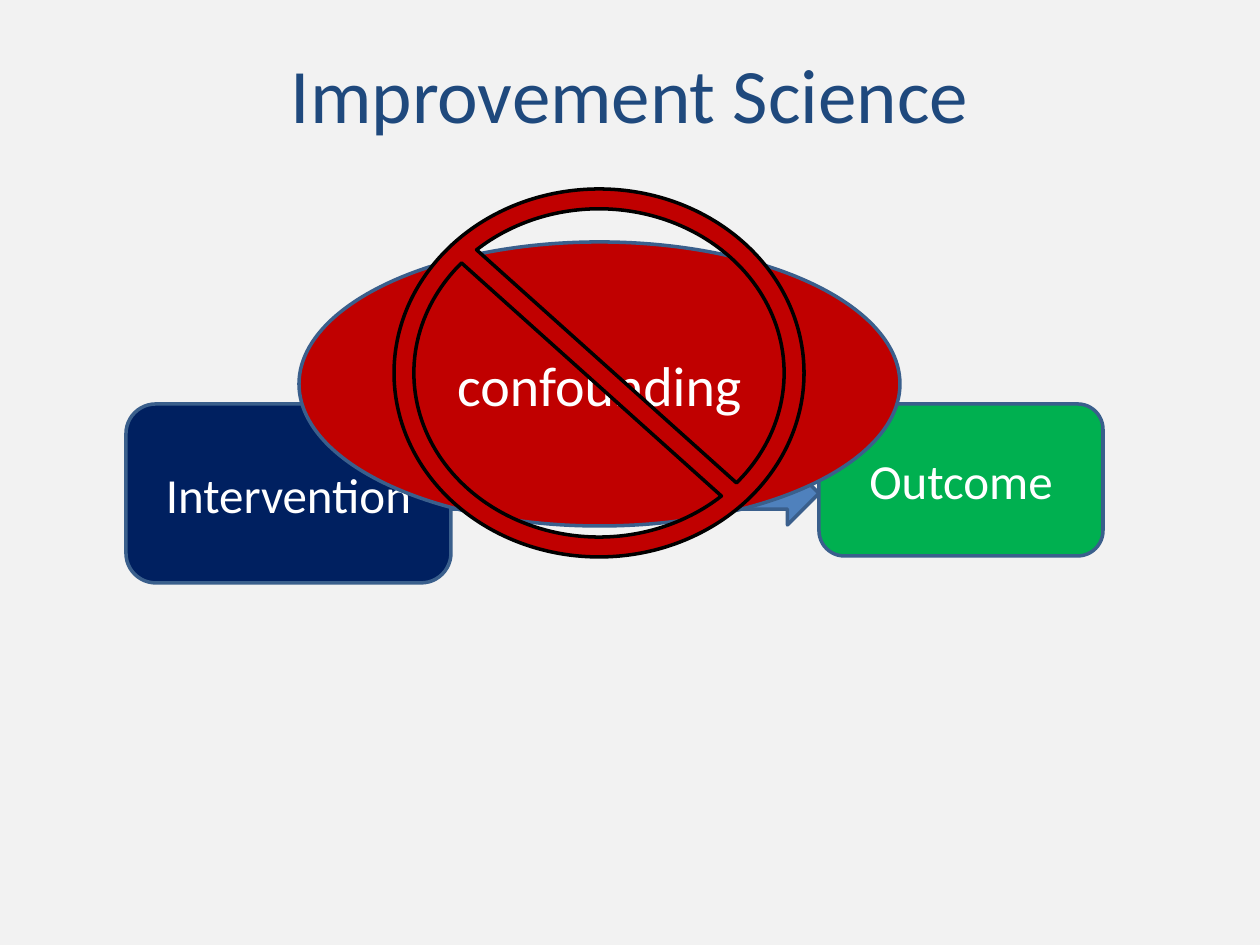
from pptx import Presentation
from pptx.dml.color import RGBColor as RGB
from pptx.enum.shapes import MSO_SHAPE as Shape
from pptx.enum.text import MSO_ANCHOR as Anchor, PP_ALIGN as Align
from pptx.util import Emu, Pt

SCALE = 914400 / 126
FONT = "Calibri"
PALE = RGB(0xF2, 0xF2, 0xF2)
WHITE = RGB(0xFF, 0xFF, 0xFF)
BLACK = RGB(0x00, 0x00, 0x00)
NAVY = RGB(0x00, 0x20, 0x60)
BLUE = RGB(0x4F, 0x81, 0xBD)
EDGE = RGB(0x3A, 0x5F, 0x8C)
INK = RGB(0x1F, 0x49, 0x7D)
GREEN = RGB(0x00, 0xB0, 0x50)
RED = RGB(0xC0, 0x00, 0x00)


def px(n):
    return Emu(round(n * SCALE))


def write(shape, text, size=28, color=WHITE):
    frame = shape.text_frame
    frame.word_wrap = True
    frame.vertical_anchor = Anchor.MIDDLE
    para = frame.paragraphs[0]
    para.alignment = Align.CENTER
    run = para.add_run()
    run.text = text
    run.font.name = FONT
    run.font.size = Pt(size)
    run.font.color.rgb = color


def draw(slide, kind, box, fill, edge=EDGE):
    shape = slide.shapes.add_shape(kind, *map(px, box))
    shape.shadow.inherit = False
    shape.fill.solid()
    shape.fill.fore_color.rgb = fill
    shape.line.color.rgb = edge
    shape.line.width = Pt(2)
    return shape


def head(slide, text, box):
    title = slide.shapes.title
    title.left, title.top, title.width, title.height = map(px, box)
    write(title, text, size=44, color=INK)


def main():
    deck = Presentation()
    deck.slide_width, deck.slide_height = px(1260), px(945)
    slide = deck.slides.add_slide(deck.slide_layouts[5])
    slide.background.fill.solid()
    slide.background.fill.fore_color.rgb = PALE

    head(slide, "Improvement Science", (63, 38, 1134, 110))

    cause = draw(slide, Shape.ROUNDED_RECTANGLE, (126, 404, 325, 179), NAVY)
    write(cause, "Intervention")
    draw(slide, Shape.RIGHT_ARROW, (451, 462, 368, 63), BLUE)
    effect = draw(slide, Shape.ROUNDED_RECTANGLE, (819, 404, 284, 152), GREEN)
    write(effect, "Outcome")

    bias = draw(slide, Shape.OVAL, (299, 242, 601, 284), RED)
    write(bias, "confounding", size=32)
    ban = draw(slide, Shape.NO_SYMBOL, (394, 189, 410, 368), RED, edge=BLACK)
    ban.adjustments[0] = 0.054

    deck.save("out.pptx")


if __name__ == "__main__":
    main()
